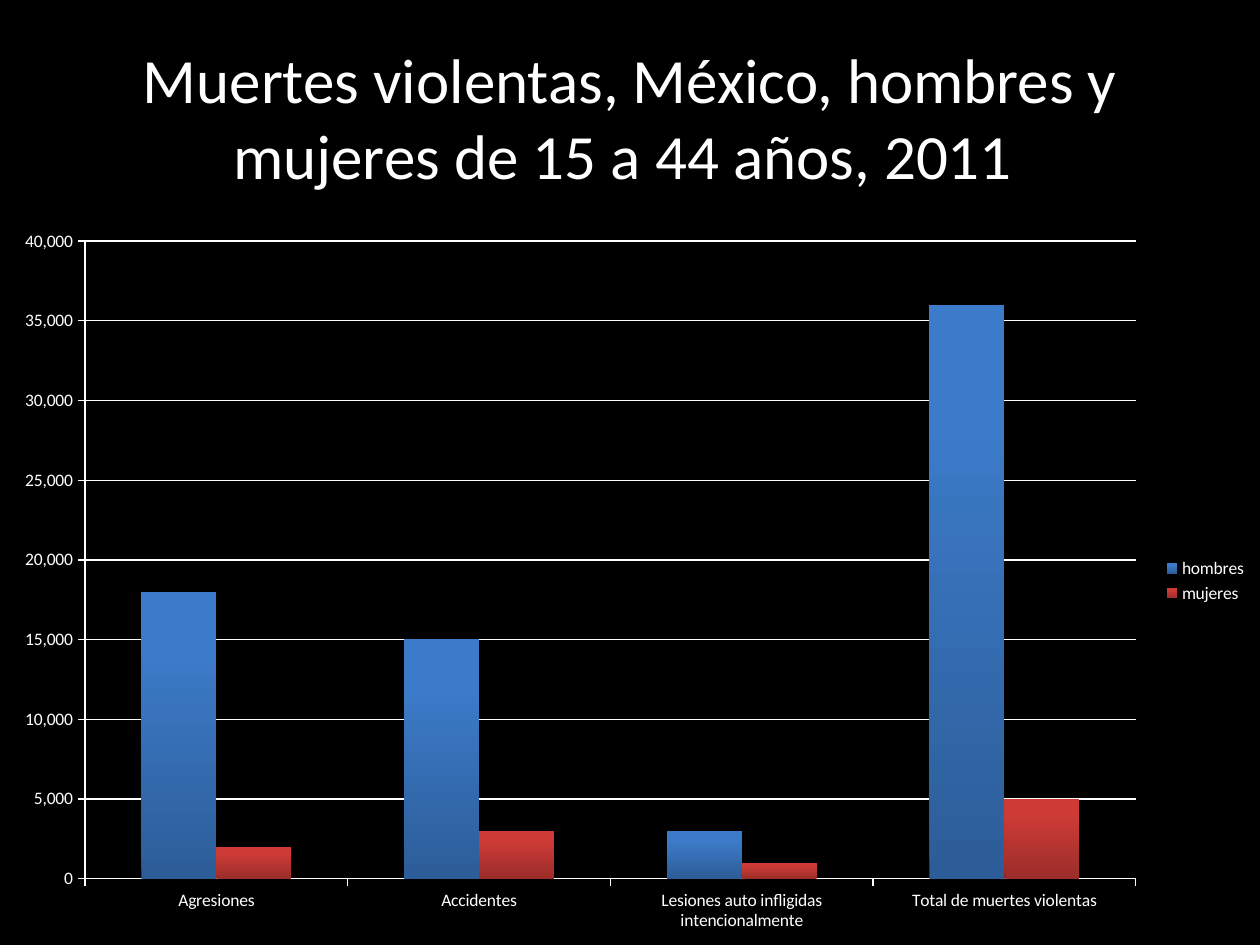
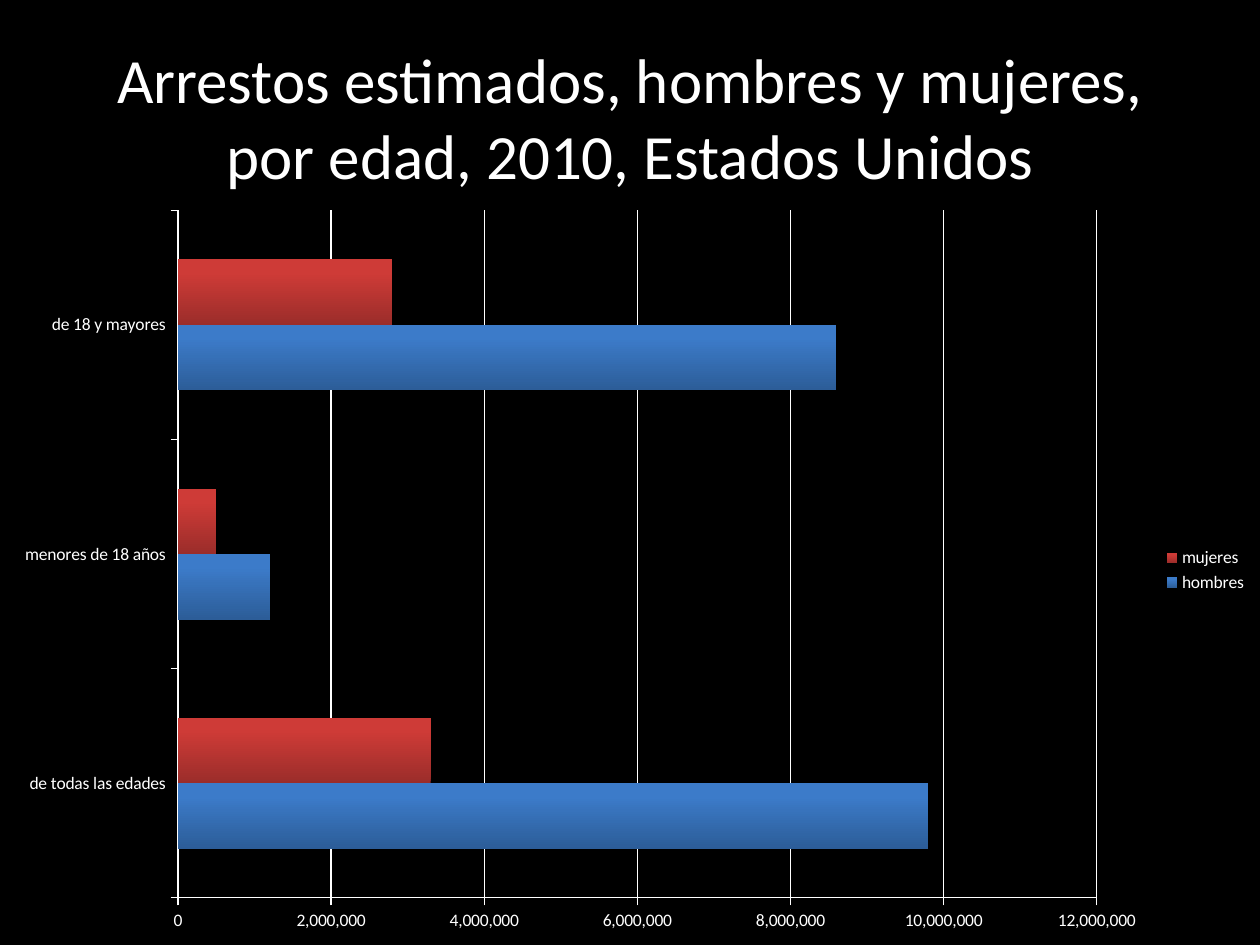
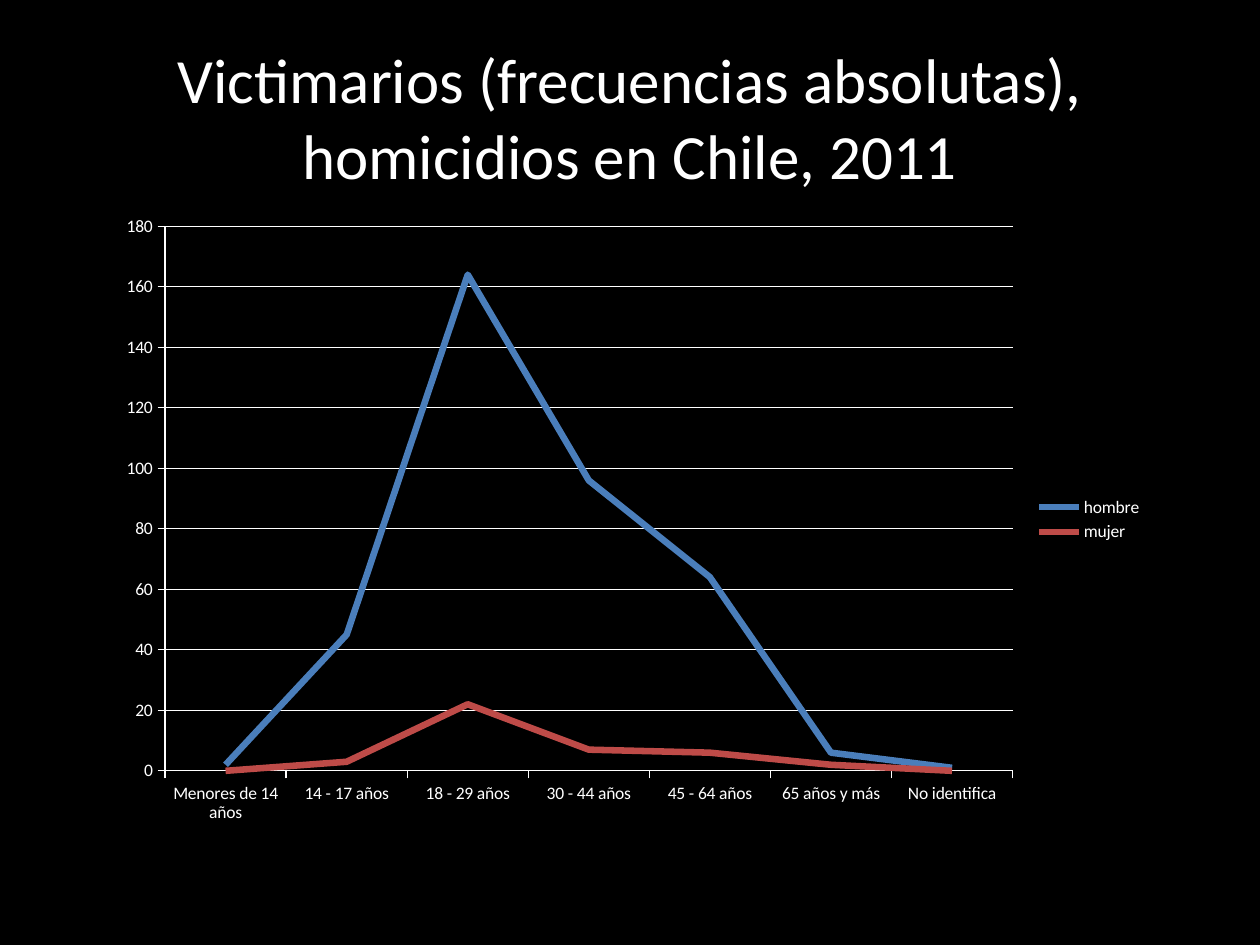
from pptx import Presentation
from pptx.chart.data import CategoryChartData
from pptx.dml.color import RGBColor
from pptx.enum import chart as ch, text
from pptx.util import Cm, Pt

BLACK = RGBColor(0x00, 0x00, 0x00)
WHITE = RGBColor(0xFF, 0xFF, 0xFF)
LINE_COLORS = (RGBColor(0x4A, 0x7E, 0xBB), RGBColor(0xBE, 0x4B, 0x48))
# Bar shading, from the bottom edge to the top edge
BAR_COLORS = ((RGBColor(0x2C, 0x5D, 0x98), RGBColor(0x3C, 0x7B, 0xC9)),
              (RGBColor(0x9B, 0x2D, 0x2A), RGBColor(0xCE, 0x3B, 0x37)))
FONT = "Calibri"
TITLE_BOX = (1.27, 0.76, 22.86, 3.18)
THOUSANDS = "#,##0"

SLIDES = [
    dict(title="Muertes violentas, México, hombres y mujeres de 15 a 44 años, 2011 ",
         kind=ch.XL_CHART_TYPE.COLUMN_CLUSTERED,
         box=(0, 4.37, 25.4, 14.68),
         number_format=THOUSANDS,
         categories=["Agresiones", "Accidentes",
                     "Lesiones auto infligidas intencionalmente",
                     "Total de muertes violentas"],
         series={"hombres": [18000, 15000, 3000, 36000],
                 "mujeres": [2000, 3000, 1000, 5000]},
         top=40000, step=5000),
    dict(title="Arrestos estimados, hombres y mujeres, por edad, 2010, Estados Unidos",
         kind=ch.XL_CHART_TYPE.BAR_CLUSTERED,
         box=(0, 3.94, 25.4, 15.11),
         number_format=THOUSANDS,
         categories=["de todas las edades", "menores de 18 años", "de 18 y mayores"],
         series={"hombres": [9800000, 1200000, 8600000],
                 "mujeres": [3300000, 500000, 2800000]},
         top=12000000, step=2000000),
    dict(title="Victimarios (frecuencias absolutas), homicidios en Chile, 2011",
         kind=ch.XL_CHART_TYPE.LINE,
         box=(2.13, 4.11, 21.16, 12.73),
         number_format="General",
         categories=["Menores de 14 años", "14 - 17 años", "18 - 29 años",
                     "30 - 44 años", "45 - 64 años", "65 años y más",
                     "No identifica"],
         series={"hombre": [2, 45, 164, 96, 64, 6, 1],
                 "mujer": [0, 3, 22, 7, 6, 2, 0]},
         top=180, step=20),
]


def set_font(font, size):
    font.name = FONT
    font.size = Pt(size)
    font.color.rgb = WHITE


def set_line(line, color, width):
    line.color.rgb = color
    line.width = Pt(width)


def add_title(s, title, box):
    sp = s.shapes.title
    sp.left, sp.top, sp.width, sp.height = map(Cm, box)
    tf = sp.text_frame
    tf.word_wrap = True
    tf.auto_size = text.MSO_AUTO_SIZE.NONE
    tf.vertical_anchor = text.MSO_ANCHOR.MIDDLE
    p = tf.paragraphs[0]
    p.alignment = text.PP_ALIGN.CENTER
    r = p.add_run()
    r.text = title
    set_font(r.font, 36)


def style_axes(chart, number_format, top, step):
    for axis in (chart.category_axis, chart.value_axis):
        axis.major_tick_mark = ch.XL_TICK_MARK.OUTSIDE
        axis.minor_tick_mark = ch.XL_TICK_MARK.NONE
        set_line(axis.format.line, WHITE, 0.75)
    chart.category_axis.has_major_gridlines = False
    values = chart.value_axis
    values.minimum_scale, values.maximum_scale = 0, top
    values.major_unit = step
    values.has_major_gridlines = True
    set_line(values.major_gridlines.format.line, WHITE, 0.75)
    values.tick_labels.number_format = number_format
    values.tick_labels.number_format_is_linked = False


def style_lines(plot):
    for series, color in zip(plot.series, LINE_COLORS):
        series.smooth = False
        series.marker.style = ch.XL_MARKER_STYLE.NONE
        set_line(series.format.line, color, 3.75)


def style_bars(plot):
    plot.gap_width = 150
    plot.overlap = 0
    for series, colors in zip(plot.series, BAR_COLORS):
        series.invert_if_negative = False
        fill = series.format.fill
        fill.gradient()
        fill.gradient_angle = 90
        for stop, color, position in zip(fill.gradient_stops, colors, (0, 0.8)):
            stop.color.rgb = color
            stop.position = position


def add_chart(s, kind, box, number_format, categories, series, top, step):
    data = CategoryChartData(number_format=number_format)
    data.categories = categories
    for name, values in series.items():
        data.add_series(name, values)
    chart = s.shapes.add_chart(kind, *map(Cm, box), data).chart
    chart.has_title = False
    set_font(chart.font, 10)
    chart.has_legend = True
    chart.legend.position = ch.XL_LEGEND_POSITION.RIGHT
    chart.legend.include_in_layout = False
    style_axes(chart, number_format, top, step)
    plot = chart.plots[0]
    plot.vary_by_categories = False
    if kind == ch.XL_CHART_TYPE.LINE:
        style_lines(plot)
    else:
        style_bars(plot)


def add_chart_slide(prs, title, **chart):
    s = prs.slides.add_slide(prs.slide_layouts.get_by_name("Title Only"))
    add_title(s, title, TITLE_BOX)
    add_chart(s, **chart)


def main():
    prs = Presentation()
    prs.slide_width, prs.slide_height = Cm(25.4), Cm(19.05)
    background = prs.slide_master.background.fill
    background.solid()
    background.fore_color.rgb = BLACK
    for content in SLIDES:
        add_chart_slide(prs, **content)
    prs.save("out.pptx")


if __name__ == "__main__":
    main()
